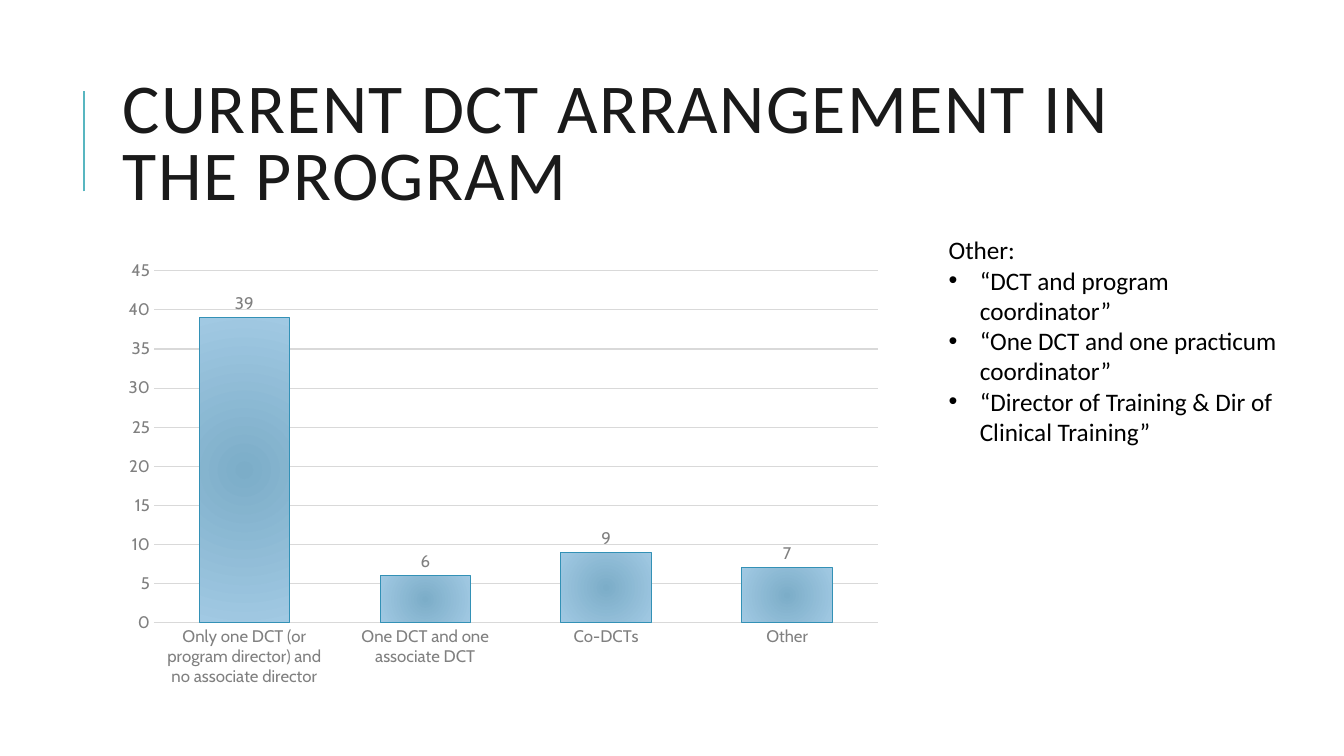
from lxml import etree
from pptx import Presentation
from pptx.chart.data import CategoryChartData
from pptx.dml.color import RGBColor
from pptx.enum.chart import XL_CHART_TYPE, XL_LABEL_POSITION, XL_TICK_MARK
from pptx.enum.shapes import MSO_CONNECTOR
from pptx.enum.text import MSO_ANCHOR, MSO_AUTO_SIZE
from pptx.oxml import parse_xml
from pptx.oxml.ns import nsdecls, qn
from pptx.util import Inches, Pt

WIDTH, HEIGHT = 13.33, 7.5
ARRANGEMENTS = {
    "Only one DCT (or program director) and no associate director": 39,
    "One DCT and one associate DCT": 6,
    "Co-DCTs": 9,
    "Other": 7,
}
OTHER_ANSWERS = [
    "“DCT and program coordinator”",
    "“One DCT and one practicum coordinator”",
    "“Director of Training & Dir of Clinical Training”",
]


def color(hex_code):
    """Turn a hex string into a colour."""
    return RGBColor.from_string(hex_code)


def share(left, top, width, height):
    """Turn shares of the slide's size into a box in inches."""
    return left * WIDTH, top * HEIGHT, width * WIDTH, height * HEIGHT


def style_font(font, face, size, hex_code):
    """Set face, size and colour of a font."""
    font.name, font.size, font.bold = face, Pt(size), False
    font.color.rgb = color(hex_code)


def style_line(line, hex_code, width):
    """Set colour and width of a line."""
    line.color.rgb = color(hex_code)
    line.width = Pt(width)


def add_heading(slide, box, text):
    """Place the title and the accent rule to its left."""
    left, top, width, height = box
    rule_x, rule_top = Inches(left - 0.29), Inches(top + 0.26)
    rule = slide.shapes.add_connector(
        MSO_CONNECTOR.STRAIGHT, rule_x, rule_top + Inches(1), rule_x, rule_top)
    style_line(rule.line, "58B6C0", 1.5)
    etree.SubElement(rule._element.spPr, qn("a:effectLst"))

    frame = slide.shapes.add_textbox(*map(Inches, box)).text_frame
    frame.word_wrap = True
    frame.vertical_anchor = MSO_ANCHOR.MIDDLE
    frame.text = text
    heading = frame.paragraphs[0]
    heading.line_spacing = 0.8
    style_font(heading.runs[0].font, "Calibri", 50, "1A1A1A")
    heading.runs[0].font._element.set("spc", "100")


def fill_radial(series, inner, outer):
    """Fill the columns with a gradient running from the centre outwards."""
    fill = parse_xml(
        f'<a:gradFill {nsdecls("a")} rotWithShape="1"><a:gsLst>'
        f'<a:gs pos="0"><a:srgbClr val="{inner}"/></a:gs>'
        f'<a:gs pos="100000"><a:srgbClr val="{outer}"/></a:gs></a:gsLst>'
        '<a:path path="circle"><a:fillToRect l="100000" t="100000" '
        'r="100000" b="100000"/></a:path></a:gradFill>')
    series.format.fill.solid()
    solid = series._element.spPr.find(qn("a:solidFill"))
    series._element.spPr.replace(solid, fill)


def add_arrangement_chart(slide, box):
    """Place the column chart of DCT arrangements."""
    data = CategoryChartData()
    data.categories = list(ARRANGEMENTS)
    data.add_series("Series 1", list(ARRANGEMENTS.values()))
    chart = slide.shapes.add_chart(
        XL_CHART_TYPE.COLUMN_CLUSTERED, *map(Inches, box), data).chart
    chart.has_title = chart.has_legend = False
    style_font(chart.font, "Cabin", 10, "000000")

    for axis in (chart.category_axis, chart.value_axis):
        axis.major_tick_mark = axis.minor_tick_mark = XL_TICK_MARK.NONE
        style_font(axis.tick_labels.font, "Cabin", 12, "808080")
    style_line(chart.category_axis.format.line, "D9D9D9", 0.75)
    counts = chart.value_axis
    counts.minimum_scale, counts.maximum_scale, counts.major_unit = 0, 45, 5
    counts.format.line.fill.background()
    style_line(counts.major_gridlines.format.line, "D9D9D9", 0.75)

    plot = chart.plots[0]
    plot.gap_width, plot.overlap, plot.vary_by_categories = 100, -24, False
    columns = plot.series[0]
    fill_radial(columns, "7CADC8", "A1C9E3")
    style_line(columns.format.line, "3391B6", 0.75)
    labels = columns.data_labels
    labels.show_value = True
    labels.position = XL_LABEL_POSITION.OUTSIDE_END
    style_font(labels.font, "Cabin", 12, "808080")


def add_other_answers(slide, box):
    """Place the bulleted list of other answers."""
    frame = slide.shapes.add_textbox(*map(Inches, box)).text_frame
    frame.word_wrap = True
    frame.auto_size = MSO_AUTO_SIZE.SHAPE_TO_FIT_TEXT
    frame.text = "\n".join(["Other:", *OTHER_ANSWERS])
    for paragraph in frame.paragraphs:
        style_font(paragraph.runs[0].font, "Calibri", 18, "000000")
    indent = Inches(0.31)
    for answer in frame.paragraphs[1:]:
        properties = answer._p.get_or_add_pPr()
        properties.set("marL", str(indent))
        properties.set("indent", str(-indent))
        etree.SubElement(properties, qn("a:buFont"), typeface="Arial")
        etree.SubElement(properties, qn("a:buChar"), char="•")


def main():
    """Build the slide and save it."""
    deck = Presentation()
    deck.slide_width, deck.slide_height = Inches(WIDTH), Inches(HEIGHT)
    slide = deck.slides.add_slide(deck.slide_layouts[6])
    add_heading(slide, share(0.084, 0.0853, 0.7975, 0.2187),
                "CURRENT DCT ARRANGEMENT IN THE PROGRAM")
    add_arrangement_chart(slide, share(0.084, 0.3333, 0.5806, 0.5867))
    add_other_answers(slide, share(0.6984, 0.304, 0.2603, 0.3773))
    deck.save("out.pptx")


if __name__ == "__main__":
    main()
